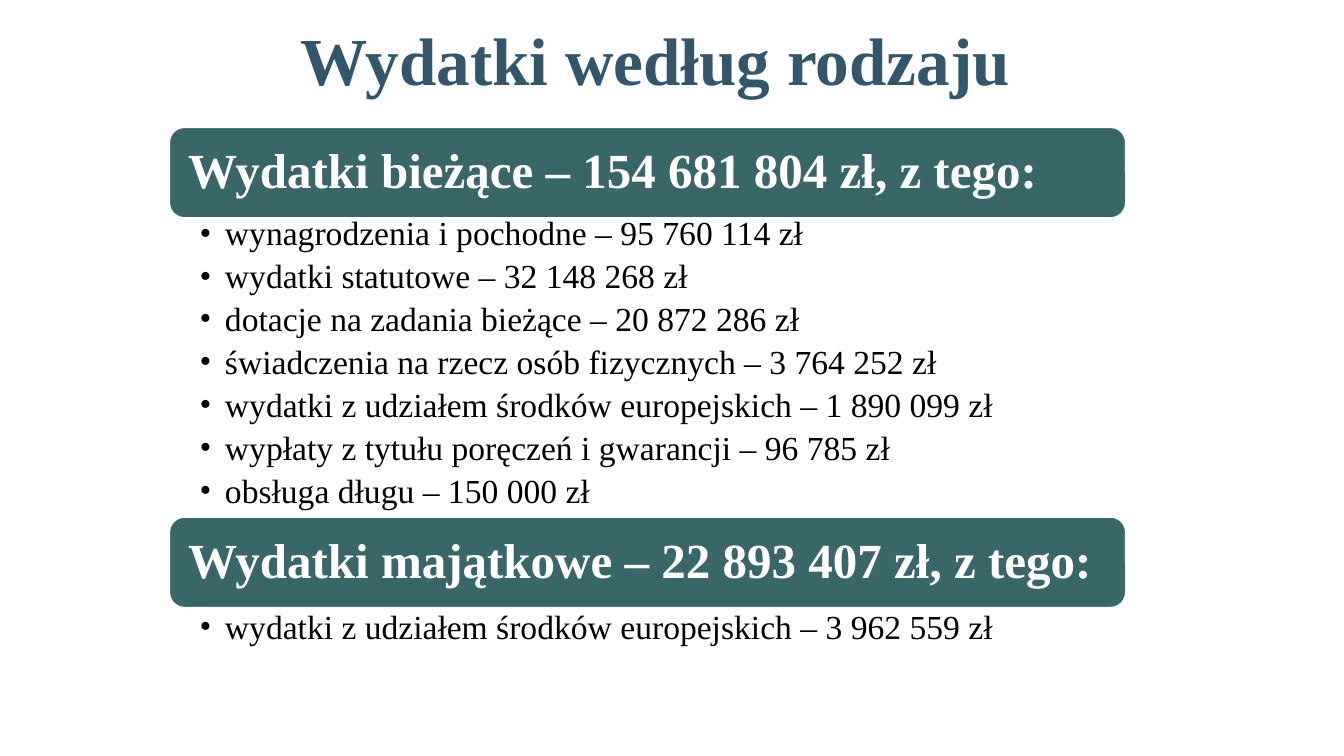
"""Build the slide listing budget spending by kind."""
from dataclasses import dataclass

from lxml.etree import SubElement
from pptx import Presentation
from pptx.dml.color import RGBColor
from pptx.enum.shapes import MSO_SHAPE
from pptx.enum.text import MSO_ANCHOR, PP_ALIGN
from pptx.oxml.ns import qn
from pptx.util import Cm, Pt

TITLE = "Wydatki według rodzaju"
GROUPS = [
    ("Wydatki bieżące – 154 681 804 zł, z tego:", 3.21, 5.38, 7.65, [
        "wynagrodzenia i pochodne – 95 760 114 zł",
        "wydatki statutowe – 32 148 268 zł",
        "dotacje na zadania bieżące – 20 872 286 zł",
        "świadczenia na rzecz osób fizycznych – 3 764 252 zł",
        "wydatki z udziałem środków europejskich – 1 890 099 zł",
        "wypłaty z tytułu poręczeń i gwarancji – 96 785 zł",
        "obsługa długu – 150 000 zł",
    ]),
    ("Wydatki majątkowe – 22 893 407 zł, z tego:", 13.03, 15.3, 1.6, [
        "wydatki z udziałem środków europejskich – 3 962 559 zł",
    ]),
]
LEFT, WIDTH, BAR = 4.27, 24.1, 2.28


@dataclass
class Theme:
    """Colours, fonts and type sizes."""
    font: str = "Times New Roman"
    title: str = "32566C"
    bar: str = "396769"
    white: str = "FFFFFF"
    text: str = "000000"
    large: int = 48
    head: int = 35
    body: int = 24


def style(para, size, color, bold=False):
    """Set the font and line spacing of a paragraph."""
    para.line_spacing = 0.9
    font = para.font
    font.name, font.size, font.bold = theme.font, Pt(size), bold
    font.color.rgb = RGBColor.from_string(color)


def inset(frame, left, top, right, bottom):
    """Set wrapping and the inner margins in centimetres."""
    frame.word_wrap = True
    frame.margin_left, frame.margin_top = Cm(left), Cm(top)
    frame.margin_right, frame.margin_bottom = Cm(right), Cm(bottom)


def add_title(slide):
    """Add the centred title."""
    frame = slide.shapes.add_textbox(Cm(0.91), Cm(0.56), Cm(31.22), Cm(1.93)).text_frame
    inset(frame, 0.25, 0.12, 0.25, 0)
    para = frame.paragraphs[0]
    para.text, para.alignment = TITLE, PP_ALIGN.CENTER
    style(para, theme.large, theme.title, True)


def add_bar(slide, text, top):
    """Add a rounded heading bar."""
    bar = slide.shapes.add_shape(
        MSO_SHAPE.ROUNDED_RECTANGLE, Cm(LEFT), Cm(top), Cm(WIDTH), Cm(BAR))
    bar.shadow.inherit = False
    bar.fill.solid()
    bar.fill.fore_color.rgb = RGBColor.from_string(theme.bar)
    bar.line.color.rgb = RGBColor.from_string(theme.white)
    bar.line.width = Pt(1)
    frame = bar.text_frame
    inset(frame, 0.36, 0.38, 0.36, 0.38)
    frame.vertical_anchor = MSO_ANCHOR.MIDDLE
    para = frame.paragraphs[0]
    para.text, para.alignment = text, PP_ALIGN.LEFT
    style(para, theme.head, theme.white, True)


def add_list(slide, items, top, height):
    """Add a bulleted list."""
    frame = slide.shapes.add_textbox(Cm(LEFT), Cm(top), Cm(WIDTH), Cm(height)).text_frame
    inset(frame, 0.76, 0.08, 0.48, 0.08)
    for i, item in enumerate(items):
        para = frame.add_paragraph() if i else frame.paragraphs[0]
        para.text, para.level = item, 1
        style(para, theme.body, theme.text)
        para.space_after = Pt(4.8)
        props = para._p.get_or_add_pPr()
        props.set("marL", str(Cm(0.64)))
        props.set("indent", str(Cm(-0.64)))
        SubElement(props, qn("a:buFont")).set("typeface", theme.font)
        SubElement(props, qn("a:buChar")).set("char", "•")
        props.append(props.find(qn("a:defRPr")))


def main():
    """Assemble and save the slide."""
    deck = Presentation()
    deck.slide_width, deck.slide_height = Cm(33.87), Cm(19.05)
    slide = deck.slides.add_slide(deck.slide_layouts[6])
    for head, top, start, height, items in GROUPS:
        add_bar(slide, head, top)
        add_list(slide, items, start, height)
    add_title(slide)
    deck.save("out.pptx")


theme = Theme()

if __name__ == "__main__":
    main()
